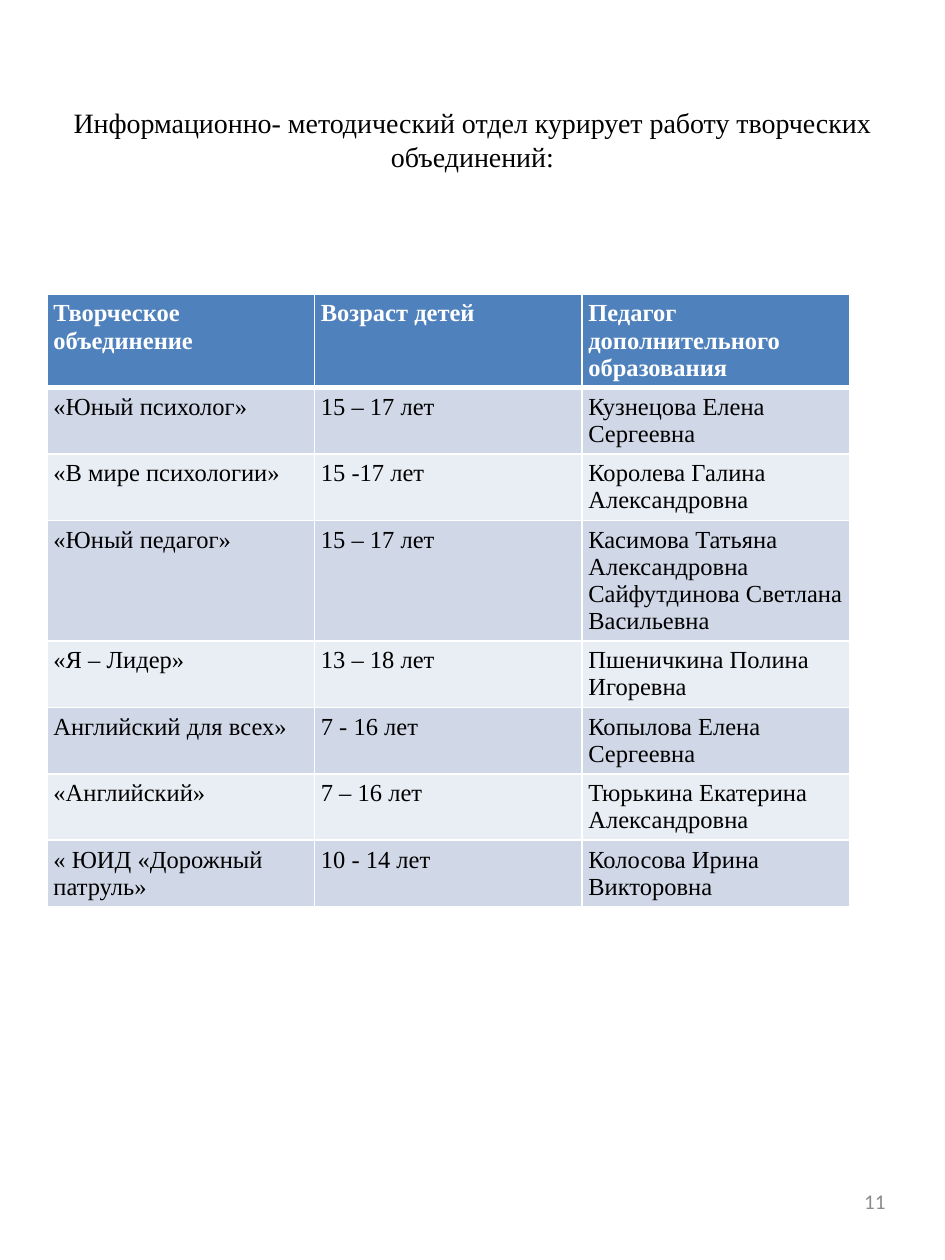
from dataclasses import dataclass

from lxml import etree
from pptx import Presentation
from pptx.dml.color import RGBColor
from pptx.enum import text
from pptx.oxml import ns
from pptx.slide import Slide
from pptx.table import _Cell
from pptx.text.text import TextFrame
from pptx.util import Pt


@dataclass(frozen=True)
class Theme:
    serif: str = "Times New Roman"
    sans: str = "Calibri"
    title_size: float = 16
    table_size: float = 14
    number_size: float = 12
    black: str = "000000"
    white: str = "FFFFFF"
    gray: str = "8C8C8C"
    header: str = "4F81BD"
    bands: tuple[str, str] = ("D0D8E8", "E9EDF4")


@dataclass(frozen=True)
class Club:
    name: str
    ages: str
    teachers: str


@dataclass(frozen=True)
class Style:
    font: str
    size: float
    color: str
    bold: bool = False
    align: text.PP_ALIGN = text.PP_ALIGN.LEFT


THEME = Theme()
TITLE = "Информационно- методический отдел курирует работу творческих объединений:"
HEADINGS = Club(
    "Творческое объединение", "Возраст детей", "Педагог дополнительного образования"
)
CLUBS = [
    Club("«Юный психолог»", "15 – 17 лет", "Кузнецова Елена Сергеевна"),
    Club("«В мире психологии»", "15 -17 лет", "Королева Галина Александровна"),
    Club(
        "«Юный педагог»",
        "15 – 17 лет",
        "Касимова Татьяна Александровна\nСайфутдинова Светлана Васильевна",
    ),
    Club("«Я – Лидер»", "13 – 18 лет", "Пшеничкина Полина Игоревна"),
    Club("Английский для всех»", "7 - 16 лет", "Копылова Елена Сергеевна"),
    Club("«Английский»", "7 – 16 лет", "Тюрькина Екатерина Александровна"),
    Club("« ЮИД «Дорожный патруль»", "10 - 14 лет", "Колосова Ирина Викторовна"),
]


def write(frame: TextFrame, words: str, style: Style) -> None:
    frame.text = words
    for para in frame.paragraphs:
        para.alignment = style.align
        para.font.name = style.font
        para.font.size = Pt(style.size)
        para.font.bold = style.bold
        para.font.color.rgb = RGBColor.from_string(style.color)


def add_borders(cell: _Cell, top: float, bottom: float) -> None:
    properties = cell._tc.get_or_add_tcPr()
    for side, width in {"lnL": 1, "lnR": 1, "lnT": top, "lnB": bottom}.items():
        line = etree.SubElement(properties, ns.qn(f"a:{side}"), w=str(Pt(width)))
        fill = etree.SubElement(line, ns.qn("a:solidFill"))
        etree.SubElement(fill, ns.qn("a:srgbClr"), val=THEME.white)


def fill_cell(cell: _Cell, words: str, row: int) -> None:
    is_header = row == 0
    add_borders(cell, top=3 if row == 1 else 1, bottom=3 if is_header else 1)
    cell.fill.solid()
    color = THEME.header if is_header else THEME.bands[(row - 1) % 2]
    cell.fill.fore_color.rgb = RGBColor.from_string(color)
    cell.margin_left = cell.margin_right = Pt(3.5)
    cell.margin_top = cell.margin_bottom = Pt(3.5)
    ink = THEME.white if is_header else THEME.black
    write(cell.text_frame, words, Style(THEME.serif, THEME.table_size, ink, is_header))


def add_title(page: Slide) -> None:
    title = page.shapes.title
    title.left, title.top, title.width, title.height = Pt(27), Pt(28.8), Pt(486), Pt(120)
    frame = title.text_frame
    frame.word_wrap = True
    frame.auto_size = text.MSO_AUTO_SIZE.NONE
    frame.vertical_anchor = text.MSO_ANCHOR.MIDDLE
    frame.margin_bottom = Pt(22)
    style = Style(
        THEME.serif, THEME.title_size, THEME.black, align=text.PP_ALIGN.CENTER
    )
    write(frame, TITLE, style)


def add_club_table(page: Slide) -> None:
    rows = [HEADINGS, *CLUBS]
    row_height = 29.2
    table = page.shapes.add_table(
        len(rows), 3, Pt(27), Pt(168), Pt(458.6), Pt(row_height * len(rows))
    ).table
    for index, club in enumerate(rows):
        for column, words in enumerate((club.name, club.ages, club.teachers)):
            fill_cell(table.cell(index, column), words, index)


def add_page_number(page: Slide) -> None:
    box = page.shapes.add_textbox(Pt(387), Pt(667.4), Pt(126), Pt(38.2))
    frame = box.text_frame
    frame.word_wrap = True
    frame.vertical_anchor = text.MSO_ANCHOR.MIDDLE
    style = Style(THEME.sans, THEME.number_size, THEME.gray, align=text.PP_ALIGN.RIGHT)
    write(frame, "11", style)


def main() -> None:
    deck = Presentation()
    deck.slide_width, deck.slide_height = Pt(540), Pt(720)
    page = deck.slides.add_slide(deck.slide_layouts.get_by_name("Title Only"))
    add_title(page)
    add_club_table(page)
    add_page_number(page)
    deck.save("out.pptx")


if __name__ == "__main__":
    main()
